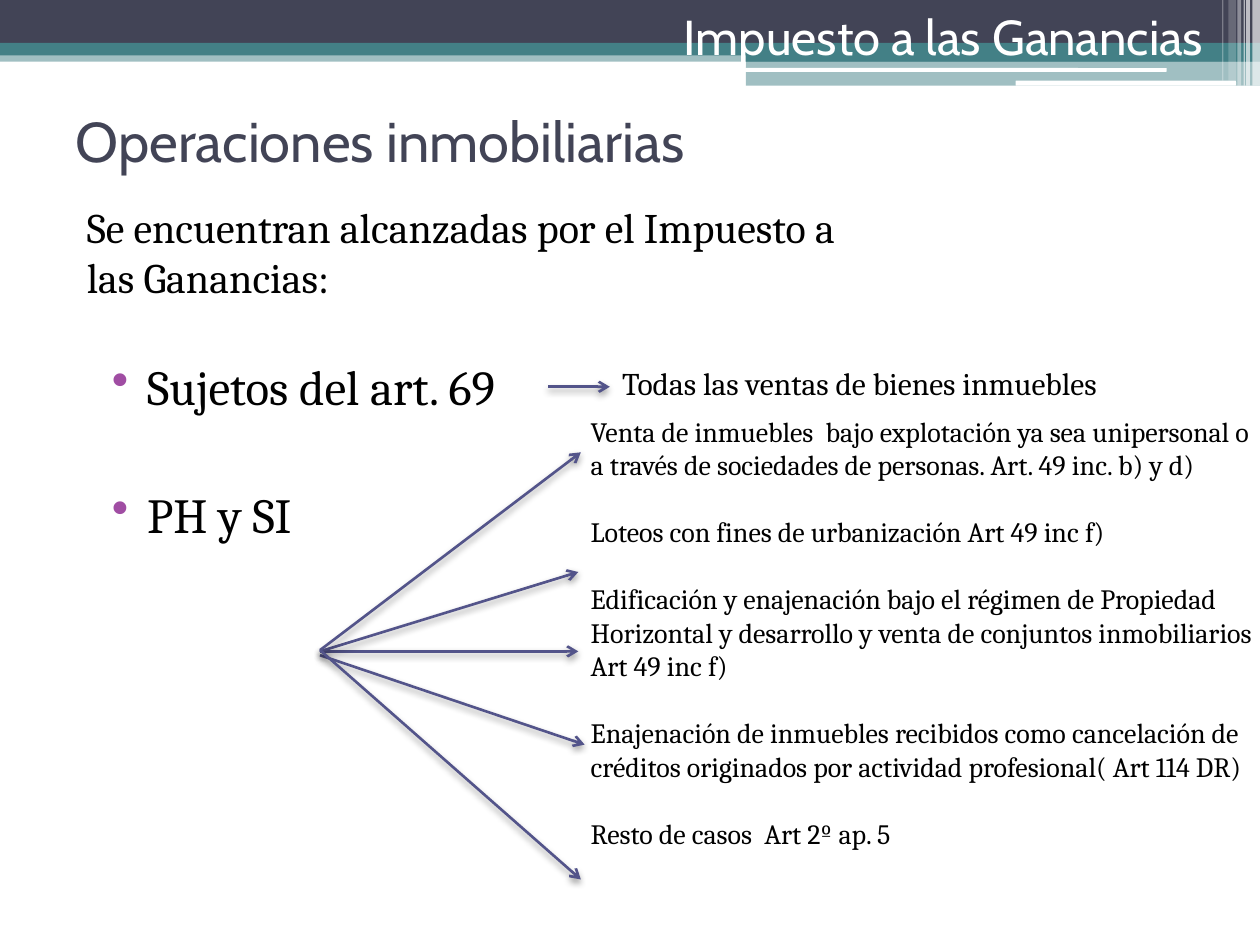
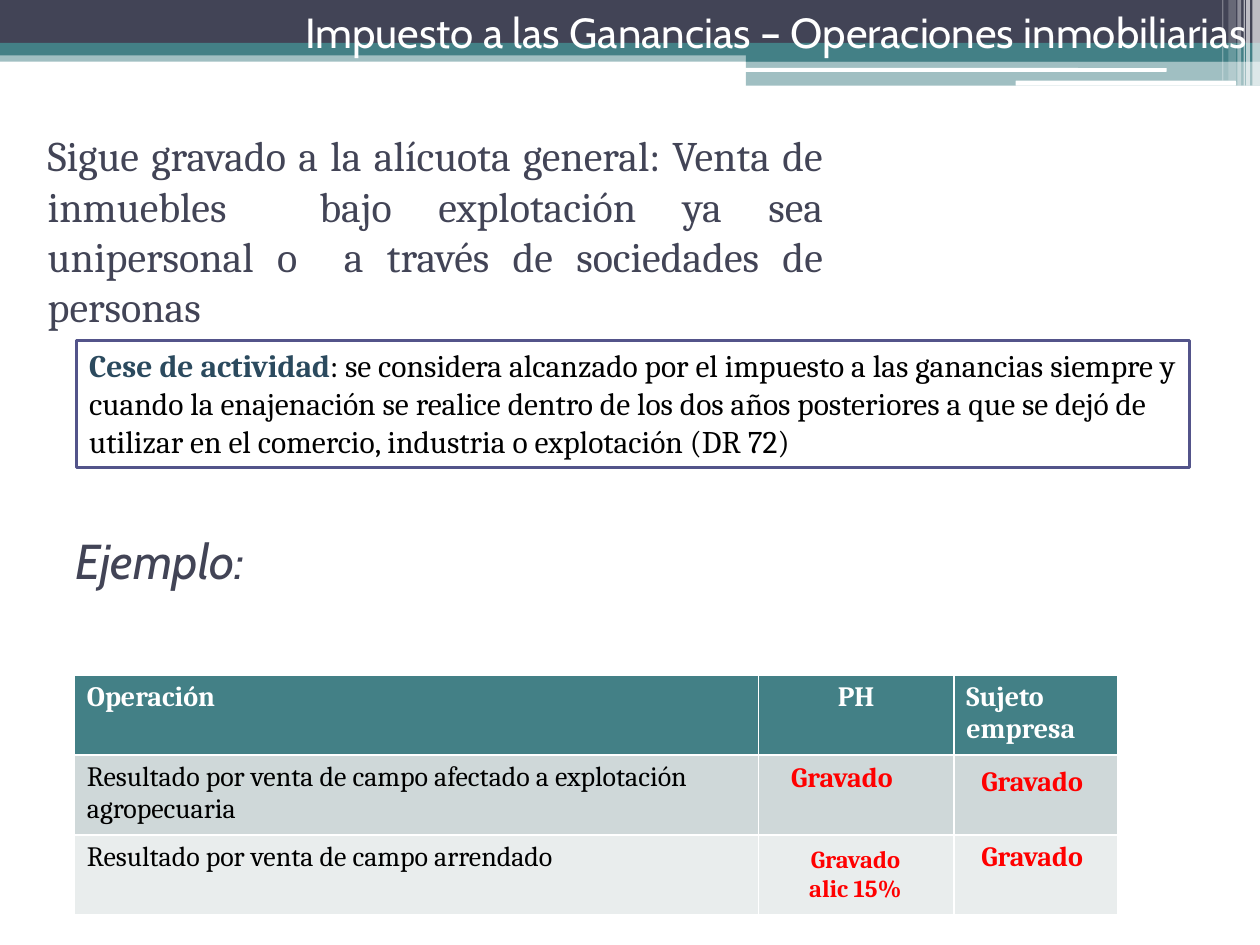
from dataclasses import dataclass

from lxml import etree
from pptx import Presentation
from pptx.dml.color import RGBColor
from pptx.enum.shapes import MSO_CONNECTOR, MSO_SHAPE
from pptx.enum.text import MSO_ANCHOR, MSO_AUTO_SIZE, PP_ALIGN
from pptx.oxml import parse_xml
from pptx.oxml.ns import nsdecls, qn
from pptx.util import Pt

SCALE = 9144  # EMU per px, 100 px to the inch
RECT, ROUND = MSO_SHAPE.RECTANGLE, MSO_SHAPE.ROUNDED_RECTANGLE
LINE = MSO_CONNECTOR.STRAIGHT
LEFT, CENTER, RIGHT = PP_ALIGN.LEFT, PP_ALIGN.CENTER, PP_ALIGN.RIGHT
JUSTIFY = PP_ALIGN.JUSTIFY
TOP, MIDDLE = MSO_ANCHOR.TOP, MSO_ANCHOR.MIDDLE
NO_FIT = MSO_AUTO_SIZE.NONE
TITLE_ONLY = 5


@dataclass(frozen=True)
class Theme:
    head: str = "Cabin"
    body: str = "Cambria"
    dark: str = "424456"
    teal: str = "438086"
    line: str = "53548A"
    dot: str = "A04DA3"
    term: str = "2B4A5E"
    alert: str = "FF0000"
    black: str = "000000"
    white: str = "FFFFFF"
    rows: tuple = ("438086", "CFD8D9", "E9EDED")
    title: int = 32
    large: int = 28
    lead: int = 24
    text: int = 18
    small: int = 16
    tiny: int = 14


def px(*values):
    return [round(v * SCALE) for v in values]


def rgb(code):
    return RGBColor.from_string(code)


class Deck:
    def __init__(self, theme):
        self.theme = theme
        self.prs = Presentation()
        self.prs.slide_width, self.prs.slide_height = px(1000, 750)
        self.slide = None

    def start(self):
        layout = self.prs.slide_layouts[TITLE_ONLY]
        self.slide = self.prs.slides.add_slide(layout)
        self.bands()

    def font(self, font, size, color, name=None, bold=False, italic=False):
        font.name = name or self.theme.body
        font.size = Pt(size)
        font.color.rgb = rgb(color)
        font.bold, font.italic = bold, italic

    def fill(self, frame, lines, size, color=None, name=None, align=LEFT,
             anchor=TOP, gap=0, bold=False, italic=False):
        """Write one paragraph per line, with gap points between them."""
        frame.word_wrap = True
        frame.vertical_anchor = anchor
        for i, line in enumerate(lines):
            para = frame.add_paragraph() if i else frame.paragraphs[0]
            para.text = line
            para.alignment = align
            para.space_before = Pt(gap if i else 0)
            self.font(para.font, size, color or self.theme.black,
                      name, bold, italic)

    def text(self, box, lines, size, **style):
        shape = self.slide.shapes.add_textbox(*px(*box))
        self.fill(shape.text_frame, lines, size, **style)
        return shape

    def title(self, box, line, size, **style):
        shape = self.slide.shapes.title
        shape.left, shape.top, shape.width, shape.height = px(*box)
        shape.text_frame.auto_size = NO_FIT
        self.fill(shape.text_frame, [line], size, name=self.theme.head, **style)
        self.slide.shapes._spTree.append(shape._element)  # above the bands

    def shape(self, box, color, kind=RECT, alpha=100, border=None):
        shape = self.slide.shapes.add_shape(kind, *px(*box))
        shape.shadow.inherit = False
        shape.fill.solid()
        shape.fill.fore_color.rgb = rgb(color)
        if alpha < 100:
            node = shape._element.spPr.find(".//" + qn("a:srgbClr"))
            etree.SubElement(node, qn("a:alpha"), val=str(alpha * 1000))
        if border:
            shape.line.color.rgb = rgb(border)
            shape.line.width = Pt(1.5)
        else:
            shape.line.fill.background()
        return shape

    def bands(self):
        t = self.theme
        # Full-width bars and the wider step at the right
        for box, color, alpha in (
                ((0, 40, 1000, 9), t.teal, 50),
                ((0, 0, 1000, 34), t.dark, 100),
                ((0, 34, 1000, 10), t.teal, 100),
                ((592, 39, 408, 10), t.teal, 100),
                ((592, 48, 408, 20), t.teal, 50)):
            self.shape(box, color, alpha=alpha)
        # White rules
        for box in ((591, 54, 335, 3), (806, 64, 175, 4)):
            self.shape(box, t.white, ROUND)
        # Pale stripes in the corner
        for x, w, h, alpha in ((994, 6, 68, 65), (989, 3, 68, 65),
                               (987, 1, 68, 60), (982, 3, 68, 40),
                               (975, 6, 64, 20), (970, 1, 64, 30)):
            self.shape((x, 0, w, h), t.white, alpha=alpha)

    def arrow(self, start, end, goal=None):
        link = self.slide.shapes.add_connector(LINE, *px(*start, *end))
        if goal is not None:
            link.end_connect(goal, 1)
        link.line.color.rgb = rgb(self.theme.line)
        link.line.width = Pt(1.5)
        props = link._element.spPr
        etree.SubElement(props.find(qn("a:ln")), qn("a:tailEnd"), type="arrow")
        props.append(parse_xml(
            f'<a:effectLst {nsdecls("a")}><a:outerShdw blurRad="52000" '
            'dist="25400" dir="5400000" rotWithShape="0">'
            f'<a:srgbClr val="{self.theme.black}"><a:alpha val="40000"/>'
            '</a:srgbClr></a:outerShdw></a:effectLst>'))

    def bullets(self, box, lines, size, gap):
        shape = self.text(box, lines, size, gap=gap)
        shape.text_frame.paragraphs[0].space_before = Pt(3)
        for para in shape.text_frame.paragraphs:
            props = para._p.get_or_add_pPr()
            left, hang = px(40, 28)
            props.set("marL", str(left))
            props.set("indent", str(-hang))
            color = etree.Element(qn("a:buClr"))
            etree.SubElement(color, qn("a:srgbClr"), val=self.theme.dot)
            mark = etree.Element(qn("a:buChar"), char="•")
            spot = props.find(qn("a:defRPr"))
            for node in (color, mark):
                if spot is None:
                    props.append(node)
                else:
                    spot.addprevious(node)

    def table(self, box, widths, rows, size):
        t = self.theme
        grid = self.slide.shapes.add_table(
            len(rows), len(widths), *px(*box)).table
        for column, width in zip(grid.columns, px(*widths)):
            column.width = width
        for r, row in enumerate(rows):
            for c, words in enumerate(row):
                cell = grid.cell(r, c)
                cell.fill.solid()
                cell.fill.fore_color.rgb = rgb(t.rows[r])
                self.fill(cell.text_frame, words.split("\n"), size,
                          color=t.black if r else t.white, bold=r == 0,
                          align=CENTER if c == 1 else LEFT)


def scope(deck):
    t = deck.theme
    deck.start()
    deck.title((50, 67, 900, 88), "Operaciones inmobiliarias", t.title,
               color=t.dark, anchor=MIDDLE)
    deck.text((533, 0, 467, 57), ["Impuesto a las Ganancias"], t.large,
              color=t.white, name=t.head)
    deck.text((59, 155, 638, 91),
              ["Se encuentran alcanzadas por el Impuesto a las Ganancias:"],
              t.lead)

    # Taxpayers and the sales that reach them
    deck.bullets((67, 278, 375, 170), ["Sujetos del art. 69", "PH y SI"],
                 t.large, gap=39.5)
    sales = deck.text((484, 284, 517, 46),
                      ["Todas las ventas de bienes inmuebles"], t.text)
    deck.arrow((435, 307), (484, 307), sales)
    deck.text((459, 324, 553, 370), [
        "Venta de inmuebles  bajo explotación ya sea unipersonal o  a través "
        "de sociedades de personas. Art. 49 inc. b) y d)",
        "Loteos con fines de urbanización Art 49 inc f)",
        "Edificación y enajenación bajo el régimen de Propiedad Horizontal y "
        "desarrollo y venta de conjuntos inmobiliarios Art 49 inc f)",
        "Enajenación de inmuebles recibidos como cancelación de créditos "
        "originados por actividad profesional( Art 114 DR)",
        "Resto de casos  Art 2º ap. 5"], t.small, gap=19)

    # Fan of arrows
    for y, end in ((517, (459, 517)), (520, (464, 591)), (517, (459, 454)),
                   (516, (461, 359)), (516, (461, 698))):
        deck.arrow((254, y), end)


def example(deck):
    t = deck.theme
    deck.start()
    deck.title((50, 0, 950, 50),
               "Impuesto a las Ganancias – Operaciones inmobiliarias",
               t.lead, color=t.white, align=RIGHT)

    # General rule and end of activity
    rule = deck.shape((28, 98, 635, 212), t.white)
    deck.fill(rule.text_frame, [
        "Sigue gravado a la alícuota general: Venta de inmuebles  bajo "
        "explotación ya sea unipersonal o  a través de sociedades de "
        "personas"], t.lead, color=t.dark, align=JUSTIFY)
    note = deck.shape((61, 270, 883, 101), t.white, border=t.line)
    deck.fill(note.text_frame, ["Cese de actividad"], t.text)
    para = note.text_frame.paragraphs[0]
    deck.font(para.runs[0].font, t.text, t.term, bold=True)
    rest = para.add_run()
    rest.text = (": se considera alcanzado por el impuesto a las ganancias "
                 "siempre y cuando la enajenación se realice dentro de los "
                 "dos años posteriores a que se dejó de utilizar en el "
                 "comercio, industria o explotación (DR 72)")
    deck.font(rest.font, t.text, t.black)

    # Worked case
    deck.text((50, 414, 850, 60), ["Ejemplo:"], t.large, color=t.dark,
              name=t.head, anchor=MIDDLE, italic=True)
    deck.table((59, 536, 828, 190), (543, 155, 130), (
        ("Operación", "PH", "Sujeto empresa"),
        ("Resultado por venta de campo afectado a explotación\nagropecuaria",
         "", ""),
        ("Resultado por venta de campo arrendado", "", "")), t.small)

    # Outcomes over the table
    for x, y in ((618, 598), (769, 601), (769, 661)):
        deck.text((x, y, 120, 37), ["Gravado"], t.small, color=t.alert,
                  bold=True)
    deck.text((596, 665, 166, 57), ["Gravado", "alic 15%"], t.tiny,
              color=t.alert, align=CENTER, bold=True)


def main():
    deck = Deck(Theme())
    scope(deck)
    example(deck)
    deck.prs.save("out.pptx")


if __name__ == "__main__":
    main()
